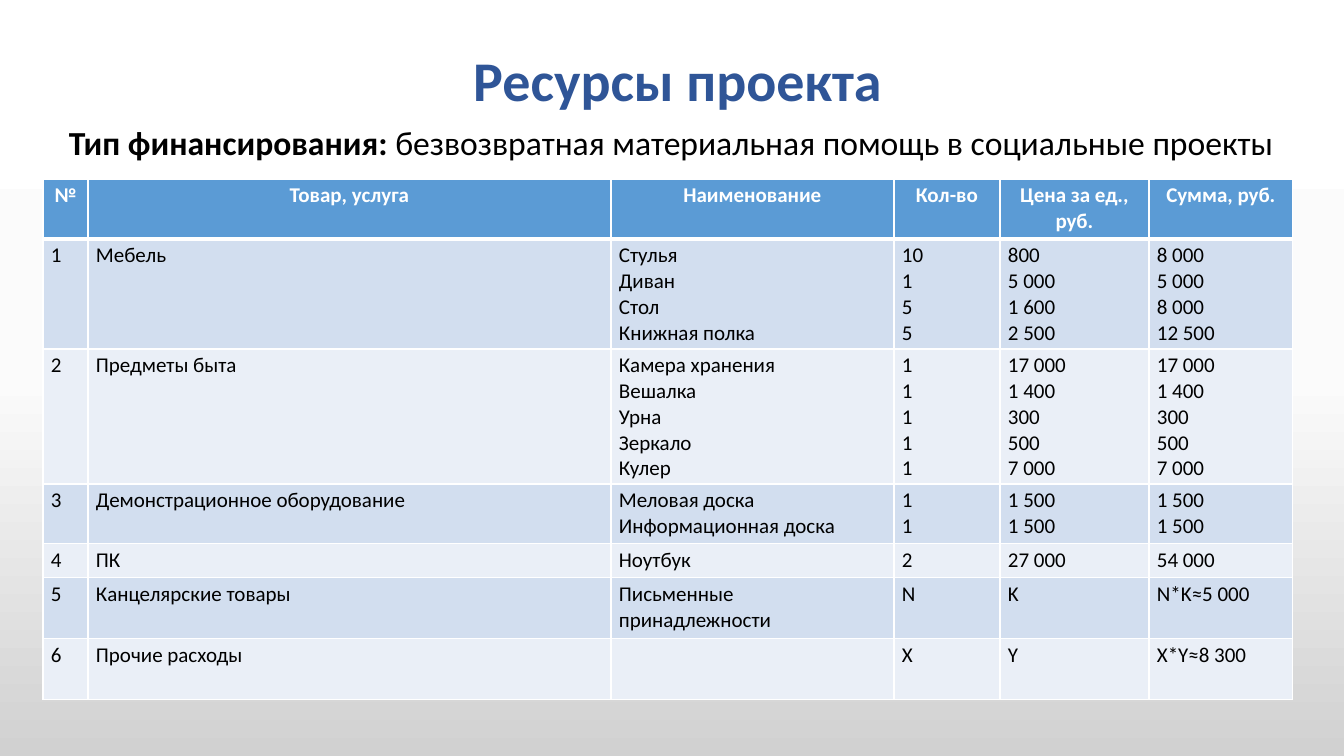
from lxml import etree
from copy import deepcopy
from pptx import Presentation
from pptx.dml.color import RGBColor
from pptx.enum.text import MSO_ANCHOR, MSO_AUTO_SIZE, PP_ALIGN
from pptx.oxml.ns import qn
from pptx.util import Emu, Pt

CENTER, LEFT = PP_ALIGN.CENTER, PP_ALIGN.LEFT
TOP = MSO_ANCHOR.TOP
GROW = MSO_AUTO_SIZE.SHAPE_TO_FIT_TEXT
FONT = "Calibri"
COLORS = {
    "title": "2F5597", "text": "000000", "white": "FFFFFF",
    "header": "5B9BD5", "odd": "D2DEEF", "even": "EAEFF7",
}
BACKGROUND = [(0, "FFFFFF"), (0.5, "FBFBFB"), (1, "D1D1D1")]
COLUMNS = [45, 523, 283, 106, 149, 144]
ROWS = [60, 110, 135, 60, 34, 61, 61]
RESOURCES = [
    ["№", "Товар, услуга", "Наименование", "Кол-во", "Цена за ед.,\nруб.", "Сумма, руб."],
    ["1", "Мебель", "Стулья\nДиван\nСтол\nКнижная полка", "10\n1\n5\n5",
     "800\n5 000\n1 600\n2 500", "8 000\n5 000\n8 000\n12 500"],
    ["2", "Предметы быта", "Камера хранения\nВешалка\nУрна\nЗеркало\nКулер", "1\n1\n1\n1\n1",
     "17 000\n1 400\n300\n500\n7 000", "17 000\n1 400\n300\n500\n7 000"],
    ["3", "Демонстрационное оборудование", "Меловая доска\nИнформационная доска", "1\n1",
     "1 500\n1 500", "1 500\n1 500"],
    ["4", "ПК", "Ноутбук", "2", "27 000", "54 000"],
    ["5", "Канцелярские товары", "Письменные принадлежности", "N", "K", "N*K≈5 000"],
    ["6", "Прочие расходы", "", "X", "Y", "X*Y≈8 300"],
]


def px(length):
    return Emu(round(length * 914400 / 100.8))


def rgb(name):
    return RGBColor.from_string(COLORS[name])


def set_font(font, size, color, bold=None):
    font.name = FONT
    font.size = Pt(size)
    font.color.rgb = rgb(color)
    font.bold = bold


def set_background(page):
    fill = page.background.fill
    fill.gradient()
    fill.gradient_angle = 270
    stop_list = next(page.element.iter(qn("a:gsLst")))
    stop_list.insert(1, deepcopy(stop_list[0]))
    for stop, (position, color) in zip(fill.gradient_stops, BACKGROUND):
        stop.position = position
        stop.color.rgb = RGBColor.from_string(color)


def place_line(box, left, top, width, height):
    box.left, box.top, box.width, box.height = map(px, (left, top, width, height))
    frame = box.text_frame
    frame.word_wrap = False
    frame.auto_size = GROW
    frame.vertical_anchor = TOP
    return frame.paragraphs[0]


def add_title(page, text):
    para = place_line(page.shapes.title, 461, 40, 433, 78)
    para.text = text
    para.alignment = CENTER
    set_font(para.font, 40, "title", True)


def add_funding(page, label, text):
    box = page.shapes.add_textbox(0, 0, 0, 0)
    para = place_line(box, 59, 117, 1237, 50)
    set_font(para.font, 24, "text")
    for words, bold in ((label, True), (text, False)):
        span = para.add_run()
        span.text = words
        span.font.bold = bold


def set_border(cell, side, points):
    properties = cell._tc.get_or_add_tcPr()
    line = etree.SubElement(properties, qn(f"a:ln{side}"), w=str(Pt(points)))
    fill = etree.SubElement(line, qn("a:solidFill"))
    etree.SubElement(fill, qn("a:srgbClr"), val=COLORS["white"])


def fill_cell(cell, text, row):
    header = row == 0
    cell.margin_left = cell.margin_right = px(8)
    cell.margin_top = cell.margin_bottom = px(4)
    for side in "LRTB":
        under_header = (row, side) in ((0, "B"), (1, "T"))
        set_border(cell, side, 3 if under_header else 1)
    cell.fill.solid()
    cell.fill.fore_color.rgb = rgb("header" if header else "odd" if row % 2 else "even")
    cell.text = text
    for para in cell.text_frame.paragraphs:
        para.alignment = CENTER if header else LEFT
        set_font(para.font, 15, "white" if header else "text", header)


def add_resources(page):
    frame = page.shapes.add_table(
        len(ROWS), len(COLUMNS), px(43), px(179), px(sum(COLUMNS)), px(sum(ROWS)))
    table = frame.table
    for column, width in zip(table.columns, COLUMNS):
        column.width = px(width)
    for row, height in zip(table.rows, ROWS):
        row.height = px(height)
    for row, texts in enumerate(RESOURCES):
        for column, text in enumerate(texts):
            fill_cell(table.cell(row, column), text, row)


def main():
    deck = Presentation()
    deck.slide_width, deck.slide_height = px(1344), px(756)
    page = deck.slides.add_slide(deck.slide_layouts[5])
    set_background(page)
    add_title(page, "Ресурсы проекта")
    add_funding(page, "Тип финансирования: ",
                "безвозвратная материальная помощь в социальные проекты")
    add_resources(page)
    deck.save("out.pptx")


if __name__ == "__main__":
    main()
